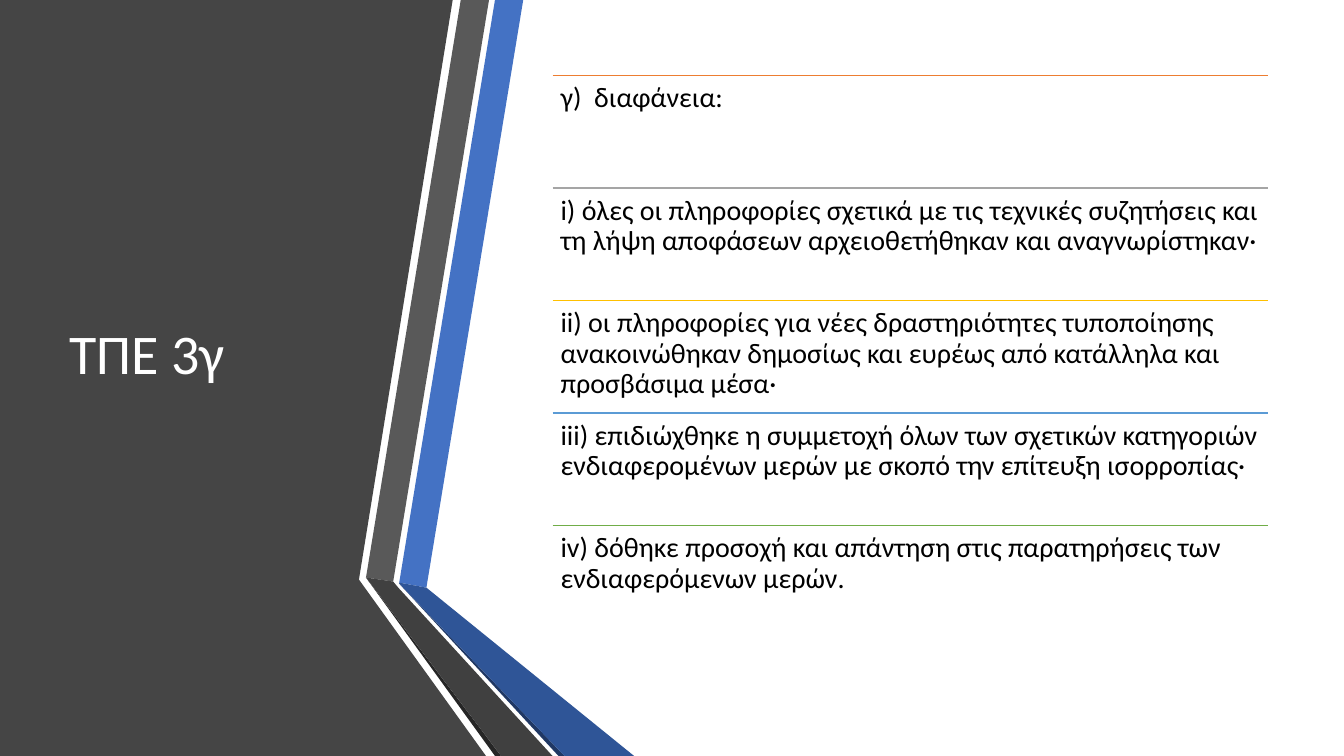
"""Build the ΤΠΕ 3γ slide: a folded ribbon panel beside five ruled statements."""
from lxml.etree import SubElement
from pptx import Presentation
from pptx.dml.color import RGBColor
from pptx.enum.shapes import MSO_CONNECTOR
from pptx.enum.text import MSO_ANCHOR
from pptx.oxml.ns import qn
from pptx.util import Inches, Pt


def paint(color_format, hex_color):
    color_format.rgb = RGBColor.from_string(hex_color)


def write(page, text, bounds, inset, size, hex_color, anchor):
    box = page.shapes.add_textbox(*map(Inches, bounds))
    frame_format = {
        "word_wrap": True, "vertical_anchor": anchor,
        "margin_left": inset, "margin_right": inset,
        "margin_top": inset, "margin_bottom": inset,
    }
    for name, value in frame_format.items():
        setattr(box.text_frame, name, value)
    para = box.text_frame.paragraphs[0]
    para.line_spacing = 0.9
    span = para.add_run()
    span.text = text
    for name, value in {"name": "Calibri", "size": Pt(size)}.items():
        setattr(span.font, name, value)
    paint(span.font.color, hex_color)


WIDTH, HEIGHT = 13.33, 7.5
TOP = HEIGHT / 10
ROW_LEFT, ROW_WIDTH = 5.48, 7.1
STATEMENTS = [
    ("ED7D31", "γ)  διαφάνεια:"),
    ("A5A5A5", "i) όλες οι πληροφορίες σχετικά με τις τεχνικές συζητήσεις και τη λήψη "
               "αποφάσεων αρχειοθετήθηκαν και αναγνωρίστηκαν·"),
    ("FFC000", "ii) οι πληροφορίες για νέες δραστηριότητες τυποποίησης ανακοινώθηκαν "
               "δημοσίως και ευρέως από κατάλληλα και προσβάσιμα μέσα·"),
    ("5B9BD5", "iii) επιδιώχθηκε η συμμετοχή όλων των σχετικών κατηγοριών "
               "ενδιαφερομένων μερών με σκοπό την επίτευξη ισορροπίας·"),
    ("70AD47", "iv) δόθηκε προσοχή και απάντηση στις παρατηρήσεις των "
               "ενδιαφερόμενων μερών."),
]
BODY_HEIGHT = 5.58
ROW_HEIGHT = BODY_HEIGHT / len(STATEMENTS)
PANEL_AND_RIBBONS = [
    ("454545", [(0, 0), (4.49, 0), (3.56, 5.75), (4.82, HEIGHT), (0, HEIGHT)]),
    ("4472C4", [(3.96, 5.78), (4.23, 5.83), (5.19, 0), (4.91, 0)]),
    ("595959", [(4.85, 0), (4.57, 0), (3.63, 5.73), (3.9, 5.77)]),
    ("262626", [(3.63, 5.73), (4.91, HEIGHT), (4.97, HEIGHT)]),
    ("203864", [(3.96, 5.79), (5.54, HEIGHT), (5.6, HEIGHT)]),
    ("2F5597", [(3.96, 5.78), (3.96, 5.79), (5.6, HEIGHT), (6.29, HEIGHT), (4.23, 5.83)]),
    ("404040", [(3.63, 5.73), (4.97, HEIGHT), (5.48, HEIGHT), (3.95, 5.83), (3.9, 5.77)]),
]

deck = Presentation()
deck.slide_width, deck.slide_height = Inches(WIDTH), Inches(HEIGHT)
page = deck.slides.add_slide(deck.slide_layouts[6])

for hex_color, corners in PANEL_AND_RIBBONS:
    points = [(Inches(x), Inches(y)) for x, y in corners]
    builder = page.shapes.build_freeform(*points[0])
    builder.add_line_segments(points[1:], close=True)
    facet = builder.convert_to_shape()
    facet.shadow.inherit = False
    facet.fill.solid()
    paint(facet.fill.fore_color, hex_color)
    facet.line.fill.background()

write(page, "ΤΠΕ 3γ", (0.59, TOP, 3.04, BODY_HEIGHT), Inches(0.1), 40, "FFFFFF",
      MSO_ANCHOR.MIDDLE)

for row, (hex_color, statement) in enumerate(STATEMENTS):
    row_top = TOP + row * ROW_HEIGHT
    rule = page.shapes.add_connector(
        MSO_CONNECTOR.STRAIGHT, Inches(ROW_LEFT), Inches(row_top),
        Inches(ROW_LEFT + ROW_WIDTH), Inches(row_top))
    rule.line.width = Pt(1)
    paint(rule.line.color, hex_color)
    SubElement(rule.element.spPr, qn("a:effectLst"))
    write(page, statement, (ROW_LEFT, row_top, ROW_WIDTH, ROW_HEIGHT), Inches(0.08),
          20, "000000", MSO_ANCHOR.TOP)

deck.save("out.pptx")
